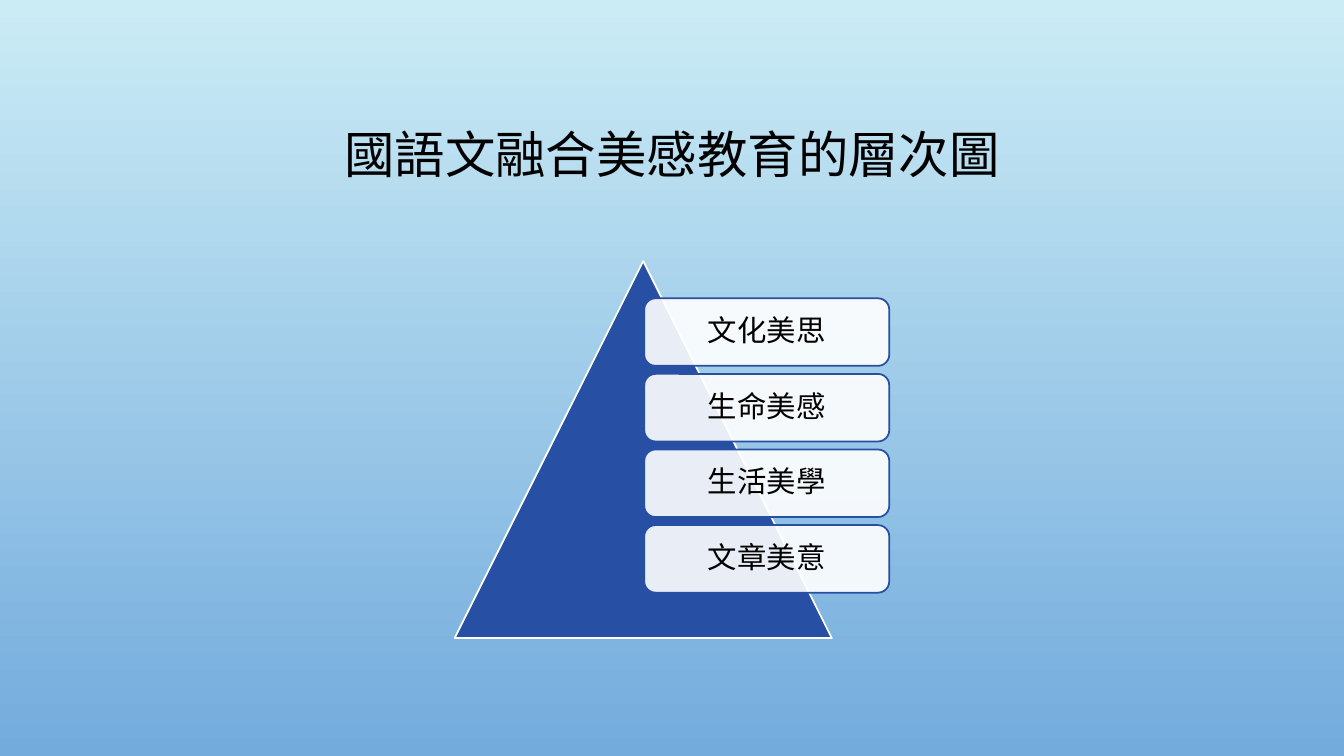
from dataclasses import dataclass

from lxml import etree
from pptx import Presentation
from pptx.dml.color import RGBColor
from pptx.enum import shapes, text
from pptx.oxml import ns
from pptx.util import Inches, Pt


@dataclass(frozen=True)
class Theme:
    sky_top: RGBColor = RGBColor.from_string("CBECF5")
    sky_bottom: RGBColor = RGBColor.from_string("73ABDD")
    blue: RGBColor = RGBColor.from_string("274FA4")
    white: RGBColor = RGBColor.from_string("FFFFFF")
    black: RGBColor = RGBColor.from_string("000000")
    font: str = "Cabin"
    title_size: Pt = Pt(36)
    level_size: Pt = Pt(21)
    outline: Pt = Pt(1.25)


theme = Theme()


def write_centred(shape, wording, size):
    frame = shape.text_frame
    frame.text = wording
    frame.word_wrap = True
    frame.auto_size = text.MSO_AUTO_SIZE.NONE
    frame.vertical_anchor = text.MSO_ANCHOR.MIDDLE
    paragraph = frame.paragraphs[0]
    paragraph.alignment = text.PP_ALIGN.CENTER
    paragraph.line_spacing = 0.9
    font = paragraph.runs[0].font
    for name, value in {"name": theme.font, "size": size, "bold": False}.items():
        setattr(font, name, value)
    font.color.rgb = theme.black


def add_outlined(kind, box, fill, line):
    shape = slide.shapes.add_shape(kind, *map(Inches, box))
    shape.shadow.inherit = False
    shape.fill.solid()
    shape.fill.fore_color.rgb = fill
    shape.line.color.rgb = line
    shape.line.width = theme.outline
    return shape


prs = Presentation()
prs.slide_width = Inches(13.33)
prs.slide_height = Inches(7.5)
slide = prs.slides.add_slide(prs.slide_layouts[5])

sky = slide.background.fill
sky.gradient()
sky.gradient_angle = 270
for stop, color in zip(sky.gradient_stops, (theme.sky_top, theme.sky_bottom)):
    stop.color.rgb = color

title = slide.shapes.title
title_box = {"left": 1, "top": 0.68, "width": 11.33, "height": 1.75}
for side, length in title_box.items():
    setattr(title, side, Inches(length))
write_centred(title, "國語文融合美感教育的層次圖", theme.title_size)

add_outlined(shapes.MSO_SHAPE.ISOSCELES_TRIANGLE, (4.51, 2.59, 3.74, 3.74),
             theme.blue, theme.white)

first_top, pitch = 2.96, 0.75
for row, wording in enumerate(["文化美思", "生命美感", "生活美學", "文章美意"]):
    level = add_outlined(shapes.MSO_SHAPE.ROUNDED_RECTANGLE,
                         (6.39, first_top + row * pitch, 2.43, 0.67),
                         theme.white, theme.blue)
    fill_color = level.fill._xPr.find(ns.qn("a:solidFill"))[0]
    etree.SubElement(fill_color, ns.qn("a:alpha"), val="90000")
    write_centred(level, wording, theme.level_size)

prs.save("out.pptx")
